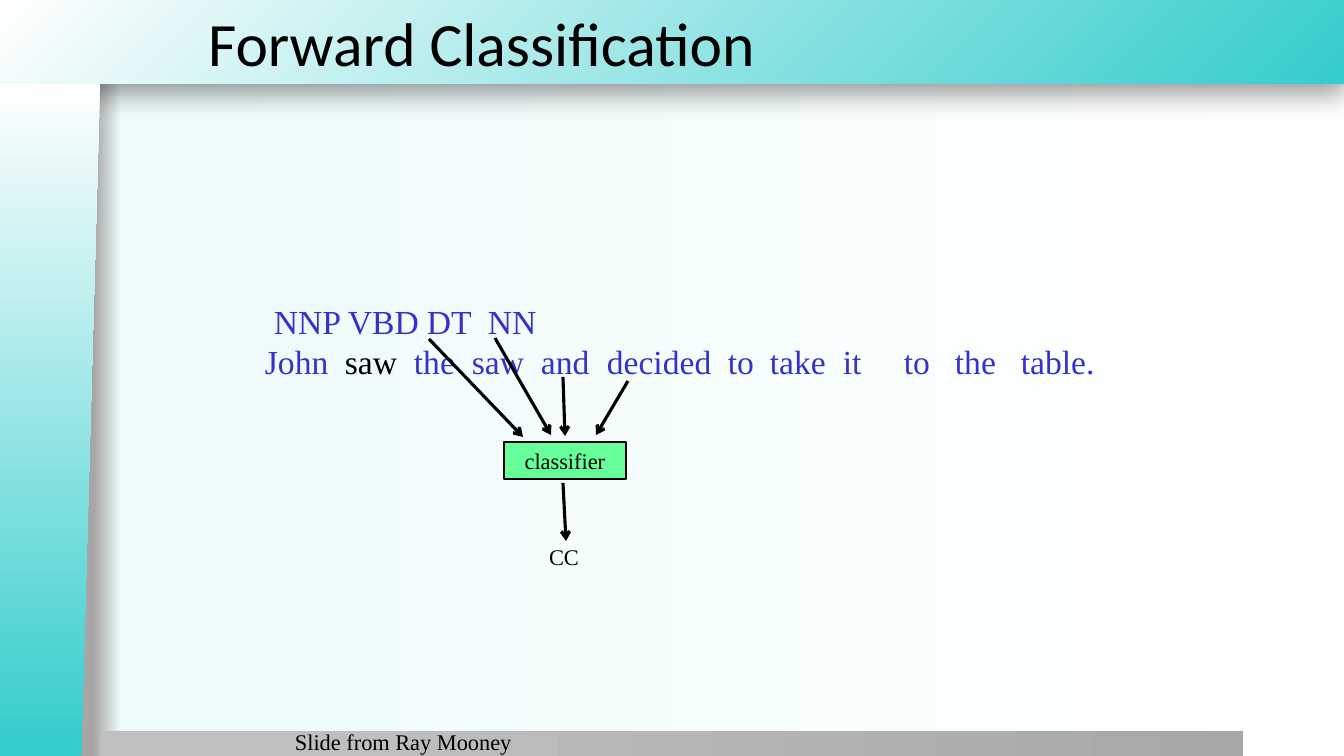
from lxml import etree
from pptx import Presentation
from pptx.dml.color import RGBColor
from pptx.enum.shapes import MSO_CONNECTOR, MSO_SHAPE
from pptx.enum.text import MSO_ANCHOR, MSO_AUTO_SIZE, PP_ALIGN
from pptx.oxml.ns import qn
from pptx.util import Pt

RECTANGLE, STRAIGHT = MSO_SHAPE.RECTANGLE, MSO_CONNECTOR.STRAIGHT
MIDDLE, TOP = MSO_ANCHOR.MIDDLE, MSO_ANCHOR.TOP
LEFT, CENTER = PP_ALIGN.LEFT, PP_ALIGN.CENTER

# Content: lengths in px, tagged words as (x, word)
TITLE = "Forward Classification"
TAGS = [(274, "NNP"), (348, "VBD"), (427, "DT"), (488, "NN")]
WORDS = [(265, "John"), (345, "saw"), (414, "the"), (472, "saw"), (541, "and"),
         (607, "decided"), (728, "to"), (770, "take"), (843, "it"),
         (904, "to"), (955, "the"), (1021, "table.")]
BLACK_WORD = 1
LABELS = [("CC", (525, 538, 78, 37), CENTER),
          ("Slide from Ray Mooney", (285, 723, 345, 25), LEFT)]
ARROWS = [((429, 339), (523, 437)), ((495, 338), (551, 435)),
          ((563, 377), (565, 436)), ((628, 381), (596, 435)),
          ((563, 483), (566, 541))]
COLORS = {"teal": "34CCCC", "white": "FFFFFF", "pale": "EDFBFB", "grey": "A6A6A6",
          "light": "BFBFBF", "dark": "A7A7A7", "blue": "3333CC",
          "green": "66FF99", "black": "000000"}
SERIF = "Times New Roman"
PX = 914400 / 100.8


def px(*lengths):
    return [round(length * PX) for length in lengths]


def rgb(name):
    return RGBColor.from_string(COLORS[name])


def add_element(parent, tag, **attributes):
    return etree.SubElement(parent, qn(tag), {k: str(v) for k, v in attributes.items()})


def set_gradient(fill, element, stops, angle=None):
    """Linear at an angle in degrees, or radial from the bottom right corner."""
    fill.gradient()
    gradient = element.find(".//" + qn("a:gradFill"))
    for child in list(gradient):
        gradient.remove(child)
    stop_list = add_element(gradient, "a:gsLst")
    for percent, name in stops:
        stop = add_element(stop_list, "a:gs", pos=percent * 1000)
        add_element(stop, "a:srgbClr", val=COLORS[name])
    if angle is None:
        path = add_element(gradient, "a:path", path="circle")
        add_element(path, "a:fillToRect", l=100000, t=100000)
    else:
        add_element(gradient, "a:lin", ang=angle * 60000, scaled=0)


def add_panel(shape, stops, angle=None):
    set_gradient(shape.fill, shape._element, stops, angle)
    shape.line.fill.background()
    shape.shadow.inherit = False
    return shape


def set_frame(frame, anchor, wrap=True):
    frame.word_wrap = wrap
    frame.auto_size = MSO_AUTO_SIZE.NONE
    frame.vertical_anchor = anchor


def style_run(run, size, color, font=SERIF):
    run.font.size = Pt(size)
    run.font.name = font
    run.font.color.rgb = rgb(color)


def set_label(frame, text, anchor, alignment):
    set_frame(frame, anchor)
    frame.text = text
    frame.paragraphs[0].alignment = alignment
    style_run(frame.paragraphs[0].runs[0], 16, "black")


def add_words(paragraph, words, origin, black=None):
    """Place each word at its x by a tab stop."""
    tab_list = add_element(paragraph._p.get_or_add_pPr(), "a:tabLst")
    for index, (x, word) in enumerate(words):
        tab = ""
        if x > origin:
            add_element(tab_list, "a:tab", pos=px(x - origin)[0], algn="l")
            tab = "\t"
        run = paragraph.add_run()
        run.text = tab + word
        style_run(run, 24, "black" if index == black else "blue")


presentation = Presentation()
presentation.slide_width, presentation.slide_height = px(1344, 756)
slide = presentation.slides.add_slide(presentation.slide_layouts[5])
shapes = slide.shapes

# Background and panels
set_gradient(slide.background.fill, slide._element,
             [(7, "grey"), (9, "pale"), (100, "white")], 0)
header = add_panel(shapes.add_shape(RECTANGLE, *px(0, 0, 1344, 84)),
                   [(0, "teal"), (100, "white")])
shadow = add_element(header._element.spPr.find(qn("a:effectLst")), "a:outerShdw",
                     blurRad=Pt(20), dist=Pt(6), dir=90 * 60000, rotWithShape=0)
shadow_color = add_element(shadow, "a:srgbClr", val=COLORS["black"])
add_element(shadow_color, "a:alpha", val=40000)
add_panel(shapes.add_shape(RECTANGLE, *px(101, 731, 1142, 26)),
          [(20, "light"), (100, "dark")], 0)
side = shapes.build_freeform(0, 84, scale=PX)
side.add_line_segments([(100, 84), (81, 756), (0, 756)])
add_panel(side.convert_to_shape(), [(0, "white"), (99, "teal")], 90)

# Title, in front of the header
title = shapes.title
title.left, title.top, title.width, title.height = px(198, 0, 1146, 84)
set_frame(title.text_frame, MIDDLE)
title.text_frame.text = TITLE
title.text_frame.paragraphs[0].alignment = LEFT
style_run(title.text_frame.paragraphs[0].runs[0], 44, "black", "Calibri")
shapes._spTree.append(title._element)

# Tagged sentence
sentence = shapes.add_textbox(*px(255, 296, 858, 92)).text_frame
set_frame(sentence, TOP)
text_left = WORDS[0][0]
add_words(sentence.paragraphs[0], TAGS, text_left)
add_words(sentence.add_paragraph(), WORDS, text_left, BLACK_WORD)

# Classifier box and labels
classifier = shapes.add_shape(RECTANGLE, *px(504, 442, 122, 37))
classifier.fill.solid()
classifier.fill.fore_color.rgb = rgb("green")
classifier.line.color.rgb = rgb("black")
classifier.line.width = Pt(1)
classifier.shadow.inherit = False
set_label(classifier.text_frame, "classifier", MIDDLE, CENTER)
for text, box, alignment in LABELS:
    set_label(shapes.add_textbox(*px(*box)).text_frame, text, TOP, alignment)

# Arrows into and out of the classifier
for start, end in ARROWS:
    arrow = shapes.add_connector(STRAIGHT, *px(*start, *end))
    arrow.line.color.rgb = rgb("black")
    arrow.line.width = Pt(2.25)
    add_element(arrow.line._get_or_add_ln(), "a:tailEnd", type="arrow")
    add_element(arrow._element.spPr, "a:effectLst")

presentation.save("out.pptx")
